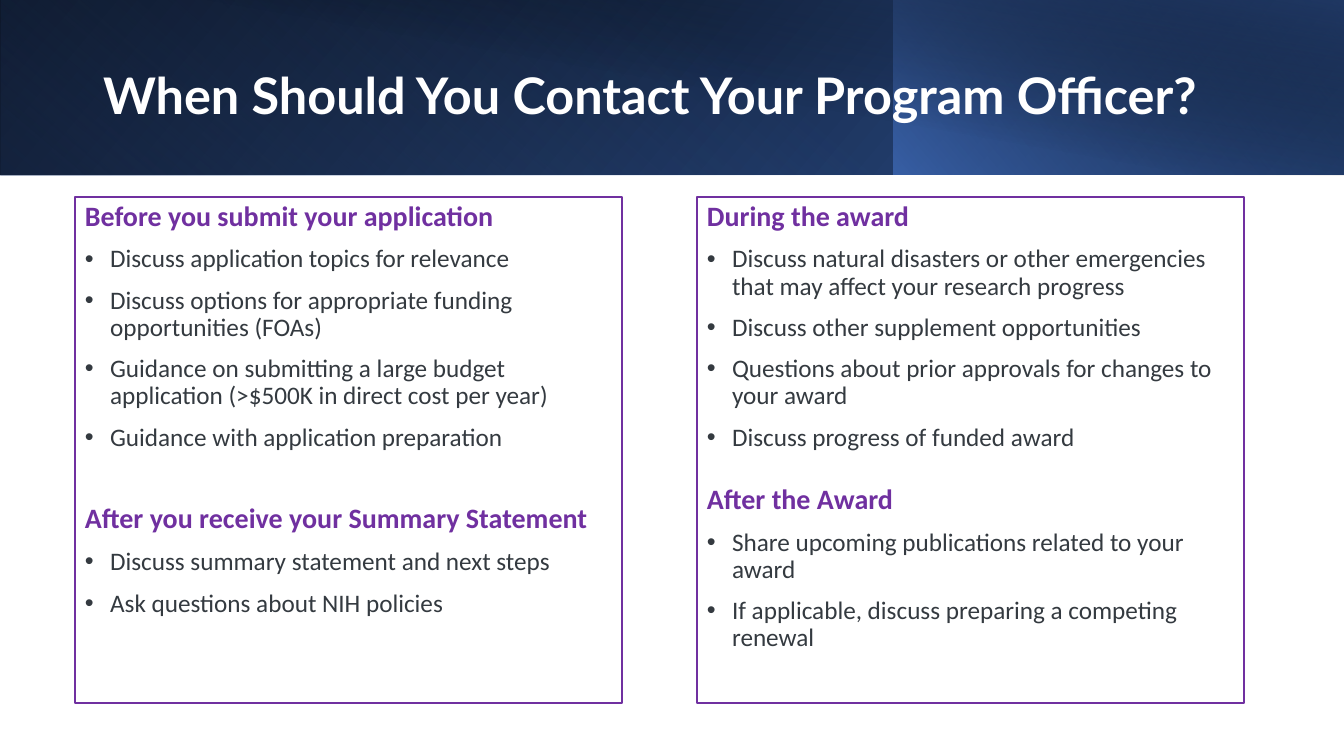
from dataclasses import dataclass

from pptx import Presentation
from pptx import util as u
from pptx.dml.color import RGBColor
from pptx.enum import shapes, text
from pptx.oxml.ns import qn

EMU_PER_PX = 914400 / 100.8


@dataclass(frozen=True)
class Theme:
    title_font: str = "Lato"
    body_font: str = "Calibri"
    white: str = "FFFFFF"
    black: str = "000000"
    blue: str = "2F5597"
    bright_blue: str = "4472C4"
    navy: str = "203864"
    purple: str = "7030A0"
    ink: str = "343A40"
    title_size: int = 36
    heading_size: int = 20
    item_size: int = 18


THEME = Theme()

BEFORE_AWARD = [
    ("Before you submit your application", 0, [
        "Discuss application topics for relevance",
        "Discuss options for appropriate funding opportunities (FOAs)",
        "Guidance on submitting a large budget application (>$500K in direct cost per year)",
        "Guidance with application preparation",
    ]),
    ("After you receive your Summary Statement", 38, [
        "Discuss summary statement and next steps",
        "Ask questions about NIH policies",
    ]),
]
FROM_AWARD_ON = [
    ("During the award", 0, [
        "Discuss natural disasters or other emergencies that may affect your research progress",
        "Discuss other supplement opportunities",
        "Questions about prior approvals for changes to your award",
        "Discuss progress of funded award",
    ]),
    ("After the Award", 24, [
        "Share upcoming publications related to your award",
        "If applicable, discuss preparing a competing renewal",
    ]),
]


def px(length):
    return u.Emu(round(length * EMU_PER_PX))


def add_rectangle(slide, left, top, width, height):
    shape = slide.shapes.add_shape(
        shapes.MSO_SHAPE.RECTANGLE, px(left), px(top), px(width), px(height))
    shape.shadow.inherit = False
    return shape


def add_gradient_band(slide, left, width, height, stops, angle, flip=True, rotation=0):
    shape = add_rectangle(slide, left, 0, width, height)
    shape.line.fill.background()
    shape.rotation = rotation
    if flip:
        shape._element.spPr.find(qn("a:xfrm")).set("flipH", "1")
    shape.fill.gradient()
    shape.fill.gradient_angle = 360 - angle
    for stop, (position, color, opacity) in zip(shape.fill.gradient_stops, stops):
        stop.position = position / 100
        stop.color.rgb = RGBColor.from_string(color)
        color_element = stop._gs.find(qn("a:srgbClr"))
        alpha = color_element.makeelement(qn("a:alpha"), {"val": str(opacity * 1000)})
        color_element.append(alpha)


def write_paragraph(paragraph, content, *, font, size, color, bold=False,
                    space_before=0, bullet=False):
    paragraph.alignment = text.PP_ALIGN.LEFT
    paragraph.line_spacing = 0.9
    paragraph.space_before = u.Pt(space_before)
    run = paragraph.add_run()
    run.text = content
    run.font.name = font
    run.font.size = u.Pt(size)
    run.font.bold = bold
    run.font.color.rgb = RGBColor.from_string(color)
    if bullet:
        properties = paragraph._p.get_or_add_pPr()
        indent = u.Inches(0.25)
        properties.set("marL", str(indent))
        properties.set("indent", str(-indent))
        for tag, attributes in (("a:buFont", {"typeface": "Arial"}),
                                ("a:buChar", {"char": "•"})):
            properties.append(properties.makeelement(qn(tag), attributes))


def add_header(slide):
    add_gradient_band(slide, 0, 1344, 175,
                      [(0, THEME.black, 100), (100, THEME.blue, 100)], 140)
    add_gradient_band(slide, 0, 895, 175,
                      [(20, THEME.bright_blue, 0), (100, THEME.navy, 55)], 230, rotation=180)
    add_gradient_band(slide, 894, 450, 175,
                      [(0, THEME.bright_blue, 66), (100, THEME.black, 30)], 220)
    add_gradient_band(slide, 50, 1294, 176,
                      [(50, THEME.black, 0), (99, THEME.navy, 52)], 280, flip=False)


def place_title(slide, content):
    title = slide.shapes.title
    title.left, title.top, title.width, title.height = px(93), px(10), px(1159), px(176)
    title.text_frame.vertical_anchor = text.MSO_ANCHOR.MIDDLE
    title.text_frame.word_wrap = True
    write_paragraph(title.text_frame.paragraphs[0], content, font=THEME.title_font,
                    size=THEME.title_size, color=THEME.white, bold=True)
    slide.shapes._spTree.append(title._element)


def add_advice_box(slide, left, sections):
    shape = add_rectangle(slide, left, 197, 547, 506)
    shape.fill.background()
    shape.line.color.rgb = RGBColor.from_string(THEME.purple)
    shape.line.width = u.Pt(1.5)
    frame = shape.text_frame
    frame.word_wrap = True
    frame.vertical_anchor = text.MSO_ANCHOR.TOP
    for index, (heading, space_before, items) in enumerate(sections):
        paragraph = frame.add_paragraph() if index else frame.paragraphs[0]
        write_paragraph(paragraph, heading, font=THEME.body_font, size=THEME.heading_size,
                        color=THEME.purple, bold=True, space_before=space_before)
        for item in items:
            write_paragraph(frame.add_paragraph(), item, font=THEME.body_font,
                            size=THEME.item_size, color=THEME.ink, space_before=10, bullet=True)


def main():
    presentation = Presentation()
    presentation.slide_width, presentation.slide_height = px(1344), px(756)
    slide = presentation.slides.add_slide(presentation.slide_layouts[5])
    add_header(slide)
    place_title(slide, "When Should You Contact Your Program Officer?")
    add_advice_box(slide, 75, BEFORE_AWARD)
    add_advice_box(slide, 697, FROM_AWARD_ON)
    presentation.save("out.pptx")


if __name__ == "__main__":
    main()
